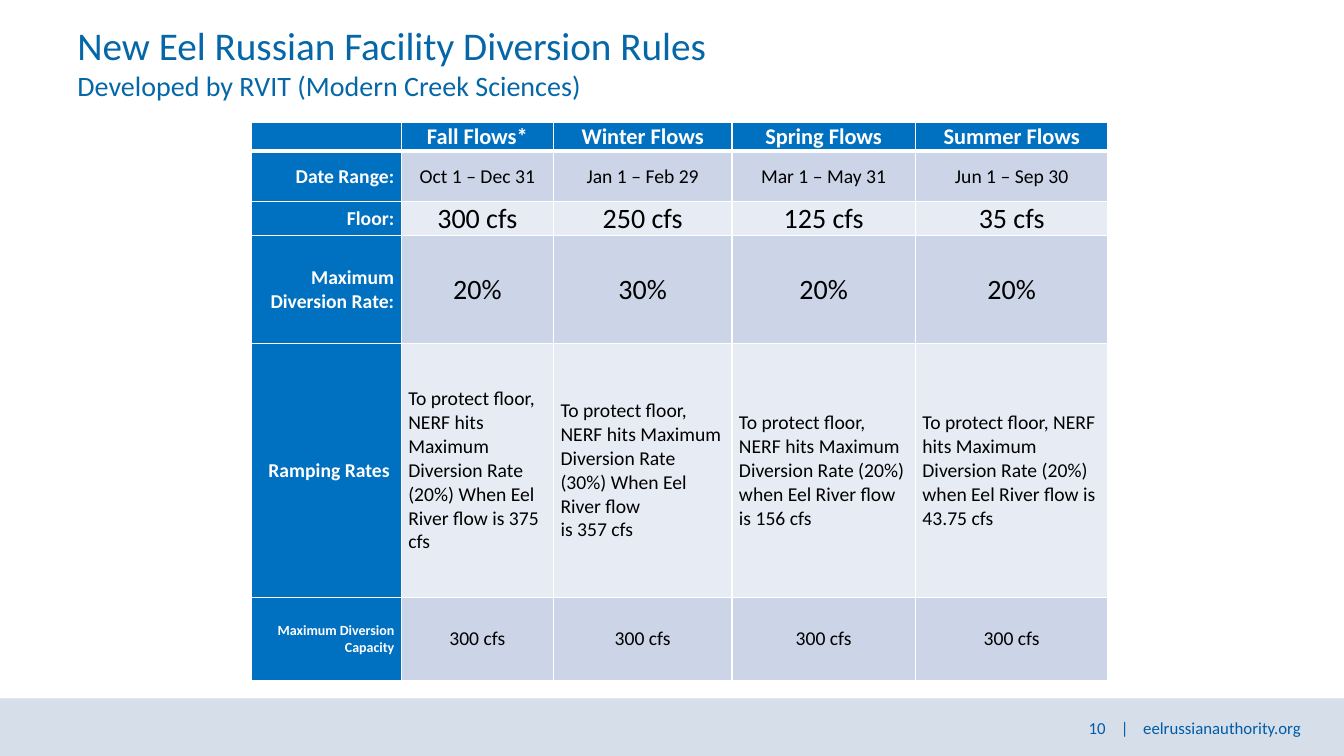
from lxml import etree
from pptx import Presentation
from pptx import util as u
from pptx.dml.color import RGBColor
from pptx.enum import shapes, text
from pptx.oxml import ns

FONT = "Calibri"
BLUE, WHITE, BLACK = "0070C0", "FFFFFF", "000000"
BANDS = ["CCD5E8", "E7EBF4"]
LEFT, CENTER, RIGHT = (text.PP_ALIGN.LEFT, text.PP_ALIGN.CENTER,
                       text.PP_ALIGN.RIGHT)

COLUMNS = [1.49, 1.51, 1.77, 1.82, 1.91]
HEADINGS = ["", "Fall Flows*", "Winter Flows", "Spring Flows", "Summer Flows"]
RAMPING = "To protect floor, NERF hits Maximum Diversion Rate "
# height, label, label size, values, value size, value alignment
RULES = [
    (0.5, "Date Range:", 14,
     ["Oct 1 – Dec 31", "Jan 1 – Feb 29", "Mar 1 – May 31", "Jun 1 – Sep 30"],
     14, CENTER),
    (0.34, "Floor:", 14, ["300 cfs", "250 cfs", "125 cfs", "35 cfs"],
     20, CENTER),
    (1.07, "Maximum Diversion Rate:", 14, ["20%", "30%", "20%", "20%"],
     20, CENTER),
    (2.52, "Ramping Rates ", 14,
     [RAMPING + "(20%) When Eel River flow is 375 cfs",
      RAMPING + "(30%) When Eel River flow\nis 357 cfs",
      RAMPING + "(20%) when Eel River flow is 156 cfs",
      RAMPING + "(20%) when Eel River flow is 43.75 cfs"], 14, LEFT),
    (0.82, "Maximum Diversion Capacity", 10, ["300 cfs"] * 4, 14, CENTER),
]


def color(value):
    return RGBColor.from_string(value)


def apply(target, values):
    for name, value in values.items():
        setattr(target, name, value)


def style(font, size, value, bold=False):
    apply(font, {"name": FONT, "size": u.Pt(size), "bold": bold})
    font.color.rgb = color(value)


def add_box(page, left, top, width, height):
    box = page.shapes.add_textbox(*map(u.Inches, (left, top, width, height)))
    apply(box.text_frame, {"word_wrap": True,
                           "vertical_anchor": text.MSO_ANCHOR.MIDDLE})
    return box.text_frame.paragraphs[0]


def add_title(page):
    para = add_box(page, 0.67, 0.3, 12, 0.63)
    lines = [("New Eel Russian Facility Diversion Rules", 28),
             ("Developed by RVIT (Modern Creek Sciences)", 20)]
    for index, (line, size) in enumerate(lines):
        if index:
            para.add_line_break()
        span = para.add_run()
        span.text = line
        style(span.font, size, "0567A7")


def add_footer(page):
    band = page.shapes.add_shape(
        shapes.MSO_SHAPE.RECTANGLE,
        *map(u.Inches, (0, 6.93, 13.33, 0.57)))
    band.shadow.inherit = False
    band.fill.solid()
    band.fill.fore_color.rgb = color("D6DEEA")
    band.line.fill.background()

    para = add_box(page, 10.7, 7.02, 2.4, 0.4)
    para.text = "10\t|\teelrussianauthority.org"
    stops = etree.SubElement(para._p.get_or_add_pPr(), ns.qn("a:tabLst"))
    for position in (0.32, 0.54):
        etree.SubElement(stops, ns.qn("a:tab"),
                         pos=str(u.Inches(position)), algn="l")
    style(para.font, 12, "005CA7")


def add_borders(cell, widths):
    """Draw white borders; widths are points for left, right, top, bottom."""
    properties = cell._tc.get_or_add_tcPr()
    for index, (side, width) in enumerate(zip("LRTB", widths)):
        line = etree.Element(ns.qn("a:ln" + side), w=str(u.Pt(width)))
        fill = etree.SubElement(line, ns.qn("a:solidFill"))
        etree.SubElement(fill, ns.qn("a:srgbClr"), val=WHITE)
        properties.insert(index, line)


def fill_cell(cell, words, size, align, fill, ink=BLACK, bold=False):
    cell.fill.solid()
    cell.fill.fore_color.rgb = color(fill)
    apply(cell, {"margin_left": u.Inches(0.07), "margin_right": u.Inches(0.07),
                 "margin_top": 0, "margin_bottom": 0,
                 "vertical_anchor": text.MSO_ANCHOR.MIDDLE})
    cell.text_frame.text = words
    paras = cell.text_frame.paragraphs
    for para in paras:
        apply(para, {"alignment": align,
                     "space_after": u.Pt(6 if len(paras) == 1 else 0)})
        style(para.font, size, ink, bold)


def add_rules_table(page):
    heights = [0.29] + [rule[0] for rule in RULES]
    table = page.shapes.add_table(
        len(heights), len(COLUMNS), u.Inches(2.49), u.Inches(1.21),
        u.Inches(sum(COLUMNS)), u.Inches(sum(heights))).table
    for column, width in zip(table.columns, COLUMNS):
        column.width = u.Inches(width)
    for row, height in zip(table.rows, heights):
        row.height = u.Inches(height)

    for index, heading in enumerate(HEADINGS):
        fill_cell(table.cell(0, index), heading, 16, CENTER, BLUE, WHITE, True)
    for row, (_, label, label_size, values, size, align) in enumerate(RULES, 1):
        fill_cell(table.cell(row, 0), label, label_size, RIGHT, BLUE, WHITE, True)
        for index, value in enumerate(values, 1):
            fill_cell(table.cell(row, index), value, size, align,
                      BANDS[(row - 1) % 2])
    for row in range(len(heights)):
        top, bottom = 3 if row == 1 else 1, 3 if row == 0 else 1
        for index in range(len(COLUMNS)):
            add_borders(table.cell(row, index), (1, 1, top, bottom))


def main():
    deck = Presentation()
    apply(deck, {"slide_width": u.Inches(13.33), "slide_height": u.Inches(7.5)})
    page = deck.slides.add_slide(deck.slide_layouts[6])
    add_footer(page)
    add_title(page)
    add_rules_table(page)
    deck.save("out.pptx")


if __name__ == "__main__":
    main()
